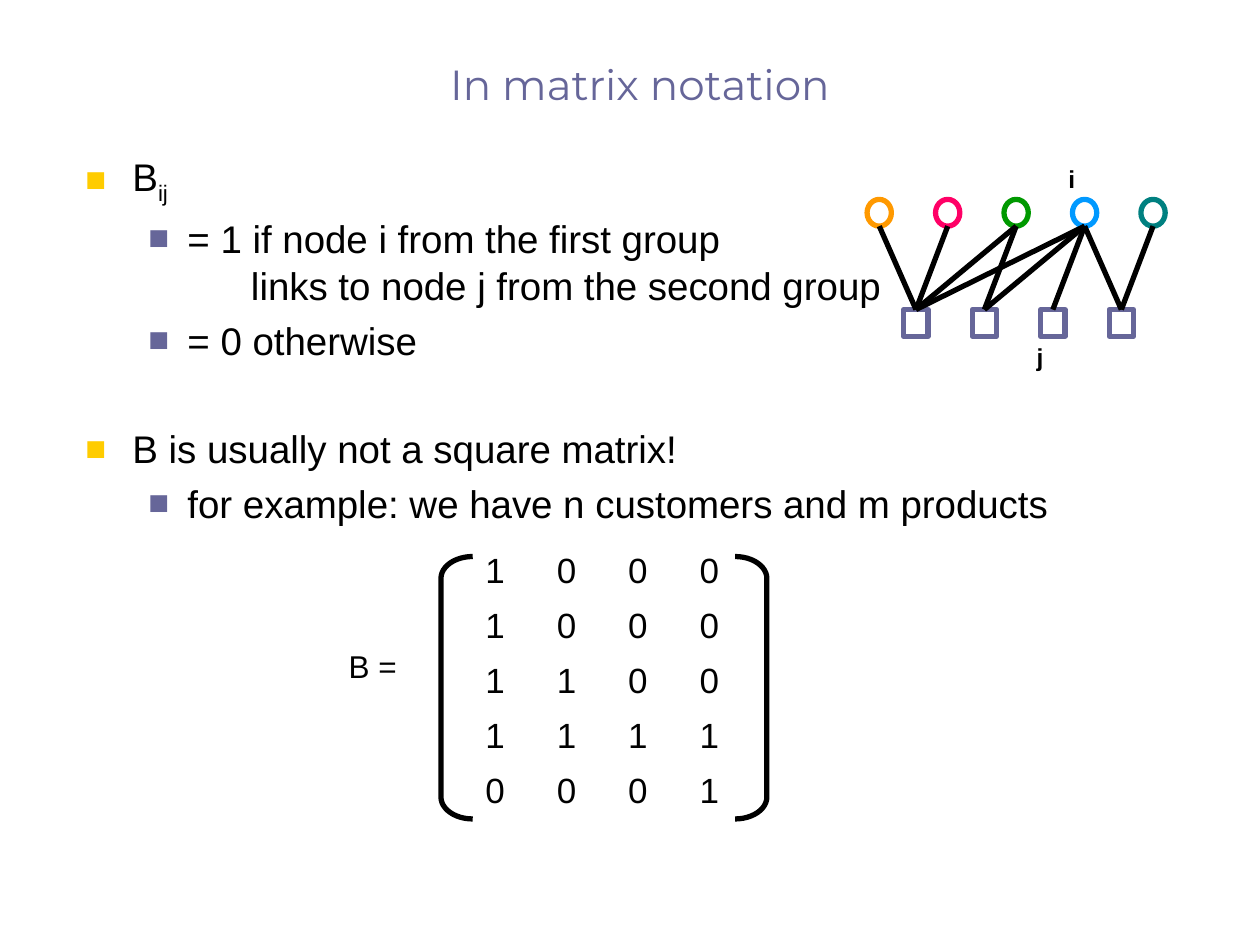
import pptx
import pptx.dml.color
import pptx.enum.shapes
import pptx.enum.text
import pptx.oxml
import pptx.oxml.ns
import pptx.util

Cm, Pt = pptx.util.Cm, pptx.util.Pt
SHAPES = pptx.enum.shapes.MSO_SHAPE
ALIGN = pptx.enum.text.PP_ALIGN
ANCHOR = pptx.enum.text.MSO_ANCHOR

COLOURS = {
    "black": "000000", "violet": "666699", "yellow": "FFCC00",
    "orange": "FF9900", "pink": "FF0066", "green": "009900",
    "blue": "0099FF", "teal": "008080",
}
MATRIX = [
    [1, 0, 0, 0],
    [1, 0, 0, 0],
    [1, 1, 0, 0],
    [1, 1, 1, 1],
    [0, 0, 0, 1],
]
# Level, left margin and first-line indent in cm, bullet colour
TOP = {"level": 0, "margin": 0.95, "indent": -0.95, "bullet": "yellow"}
SUB = {"level": 1, "margin": 2.06, "indent": -0.79, "bullet": "violet"}
CONTINUED = {"level": 1, "margin": 3.34, "indent": 0, "bullet": None}
# Style, space before in points, spans of (text, subscript)
OUTLINE = [
    (TOP, 0, [("B", False), ("ij", True)]),
    (SUB, 5, [("= 1 if node i from the first group", False)]),
    (CONTINUED, 0.5, [("links to node j from the second group", False)]),
    (SUB, 5, [("= 0 otherwise", False)]),
    (TOP, 35.5, [("B is usually not a square matrix!", False)]),
    (SUB, 5, [("for example: we have n customers and m products", False)]),
]


def rgb(name):
    return pptx.dml.color.RGBColor.from_string(COLOURS[name])


class SlideBuilder:
    font = "Arial"
    stroke = Pt(3)

    def __init__(self, slide):
        self.slide = slide
        self.shapes = slide.shapes

    def set_font(self, font, size, colour="black", **extra):
        values = {"name": self.font, "size": Pt(size), **extra}
        for name, value in values.items():
            setattr(font, name, value)
        font.color.rgb = rgb(colour)

    def text_box(self, place, **frame_values):
        box = self.shapes.add_textbox(*map(Cm, place))
        for name, value in {"word_wrap": True, **frame_values}.items():
            setattr(box.text_frame, name, value)
        return box.text_frame

    def label(self, text, place, size, align=ALIGN.CENTER, frame=None, **style):
        para = self.text_box(place, **(frame or {})).paragraphs[0]
        para.alignment = align
        span = para.add_run()
        span.text = text
        self.set_font(span.font, size, **style)

    def bullet(self, para, style):
        properties = para._p.get_or_add_pPr()
        properties.set("marL", str(Cm(style["margin"])))
        properties.set("indent", str(Cm(style["indent"])))
        if style["bullet"] is None:
            elements = ["<a:buNone {}/>"]
        else:
            elements = [
                '<a:buClr {}><a:srgbClr val="%s"/></a:buClr>' % COLOURS[style["bullet"]],
                '<a:buSzPct {} val="90000"/>',
                '<a:buFont {} typeface="Arial"/>',
                '<a:buChar {} char="■"/>',
            ]
        for element in elements:
            xml = element.format(pptx.oxml.ns.nsdecls("a"))
            properties.append(pptx.oxml.parse_xml(xml))

    def outline(self, items, place, size):
        frame = self.text_box(place)
        for number, (style, space, spans) in enumerate(items):
            para = frame.add_paragraph() if number else frame.paragraphs[0]
            para.level = style["level"]
            para.space_before = Pt(space)
            self.bullet(para, style)
            for text, subscript in spans:
                span = para.add_run()
                span.text = text
                self.set_font(span.font, size)
                if subscript:
                    span.font._element.set("baseline", "-25000")

    def outlined_shape(self, kind, place, colour):
        shape = self.shapes.add_shape(kind, *map(Cm, place))
        shape.shadow.inherit = False
        shape.fill.background()
        shape.line.color.rgb = rgb(colour)
        shape.line.width = self.stroke
        return shape

    def link(self, circle, square):
        """Join the bottom of a circle to the top of a square."""
        line = self.shapes.add_connector(
            pptx.enum.shapes.MSO_CONNECTOR.STRAIGHT,
            circle.left + circle.width // 2, circle.top + circle.height,
            square.left, square.top)
        line.end_connect(square, 0)
        line.line.color.rgb = rgb("black")
        line.line.width = self.stroke
        effects = "<a:effectLst %s/>" % pptx.oxml.ns.nsdecls("a")
        line._element.spPr.append(pptx.oxml.parse_xml(effects))

    def matrix(self, values, left, top, column, row, size):
        rows, columns = len(values), len(values[0])
        table = self.shapes.add_table(
            rows, columns, Cm(left), Cm(top), Cm(column * columns), Cm(row * rows)).table
        table.first_row = table.horz_banding = False
        for y, line in enumerate(values):
            for x, value in enumerate(line):
                cell = table.cell(y, x)
                cell.fill.background()
                cell.text = str(value)
                self.set_font(cell.text_frame.paragraphs[0].runs[0].font, size)


def main():
    deck = pptx.Presentation()
    deck.slide_width, deck.slide_height = Cm(25.4), Cm(19.05)
    page = SlideBuilder(deck.slides.add_slide(deck.slide_layouts[6]))

    page.label("In matrix notation", (1.47, 0.84, 22.86, 1.48), 24, colour="violet",
               name="Montserrat", frame={"vertical_anchor": ANCHOR.BOTTOM})
    page.outline(OUTLINE, (1.47, 2.97, 22.86, 13.97), 22)

    width, height, pitch = 0.49, 0.54, 1.38
    circles = [
        page.outlined_shape(SHAPES.OVAL, (17.48 + pitch * i, 4.02, width, height), colour)
        for i, colour in enumerate(["orange", "pink", "green", "blue", "teal"])]
    squares = [
        page.outlined_shape(SHAPES.RECTANGLE, (18.22 + pitch * j, 6.24, width, height), "violet")
        for j in range(len(MATRIX[0]))]
    for circle, row in zip(circles, MATRIX):
        for square, linked in zip(squares, row):
            if linked:
                page.link(circle, square)
    for text, left, top in [("i", 21.16, 3.18), ("j", 20.52, 6.78)]:
        page.label(text, (left, top, 0.89, 0.84), 14, bold=True)

    page.matrix(MATRIX, 9.53, 11, 1.44, 1.11, 20)
    for kind, left in [(SHAPES.LEFT_BRACKET, 8.89), (SHAPES.RIGHT_BRACKET, 14.82)]:
        bracket = page.outlined_shape(kind, (left, 11.22, 0.64, 5.29), "black")
        bracket.adjustments[0] = 0.69
    page.label("B =", (6.78, 12.91, 1.48, 1.02), 18, ALIGN.LEFT, frame={"word_wrap": False})

    deck.save("out.pptx")


if __name__ == "__main__":
    main()
